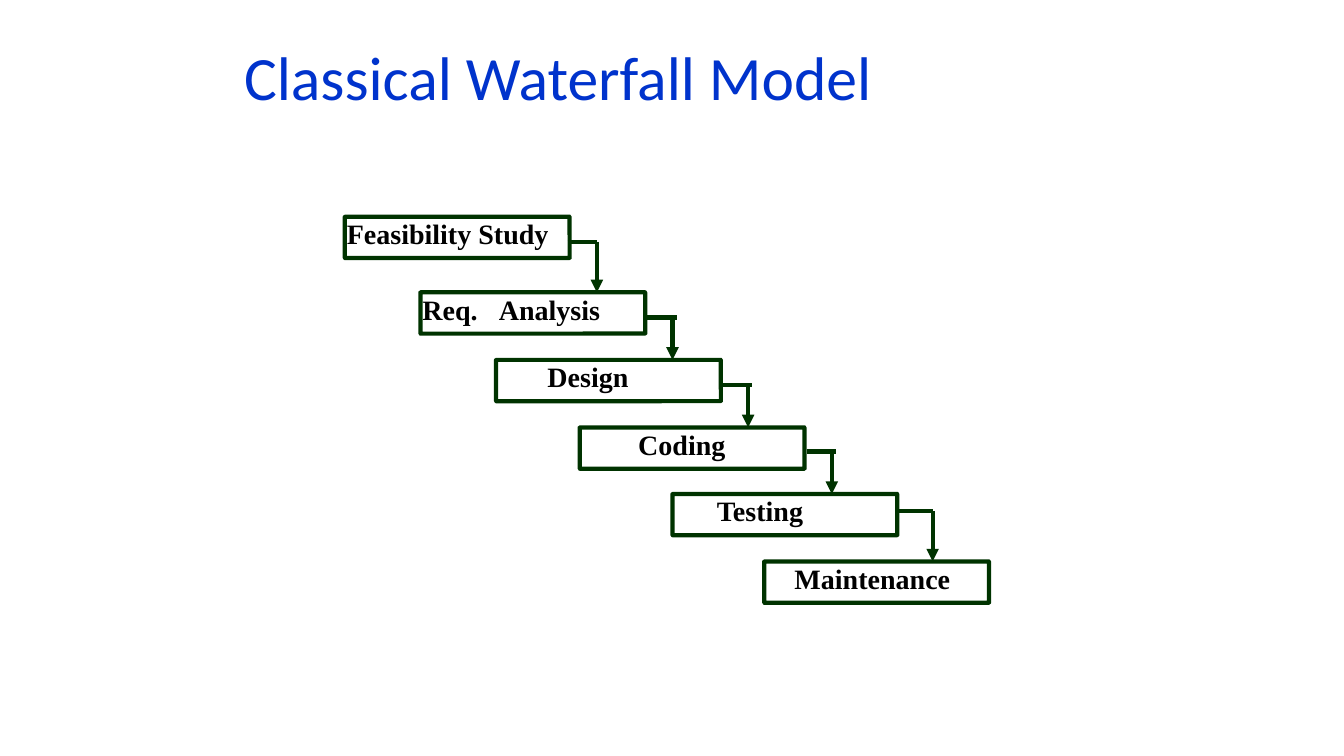
from pptx import Presentation
from pptx.dml.color import RGBColor
from pptx.enum.shapes import MSO_CONNECTOR, MSO_SHAPE
from pptx.enum.text import MSO_ANCHOR, MSO_AUTO_SIZE, PP_ALIGN
from pptx.oxml.ns import qn
from pptx.util import Inches, Pt
from lxml.etree import SubElement

COLORS = {"title": "0033CC", "text": "000000", "line": "003300"}

# Phase words, left, top, text indent
PHASES = [
    (("Feasibility Study",), 3.42, 2.15, 0),
    (("Req.", "Analysis"), 4.17, 2.9, 0),
    (("Design",), 4.92, 3.57, 0.49),
    (("Coding",), 5.75, 4.24, 0.56),
    (("Testing",), 6.67, 4.9, 0.42),
    (("Maintenance",), 7.58, 5.57, 0.28),
]
# Stub start, stub end, arrow x, stub y; each arrow ends at the next phase
STEPS = [
    (5.63, 5.92, 5.92, 2.4),
    (6.42, 6.71, 6.67, 3.15),
    (7.17, 7.46, 7.42, 3.82),
    (8, 8.29, 8.25, 4.48),
    (8.92, 9.25, 9.25, 5.07),
]


def add_text(para, text, font="Times New Roman", size=20, color="text",
             bold=False, tracking=0):
    span = para.add_run()
    span.text = text
    span.font.name = font
    span.font.size = Pt(size)
    span.font.bold = bold
    span.font.color.rgb = RGBColor.from_string(COLORS[color])
    if tracking:
        span.font._element.set("spc", str(tracking * 100))


class WaterfallSlide:
    line_width = Pt(3)
    box_width, box_height = 2.23, 0.41
    word_gap = 10  # extra points between separated words

    def __init__(self, deck):
        self.page = deck.slides.add_slide(deck.slide_layouts[5])

    def frame(self, box, anchor, line_spacing, space_before):
        frame = box.text_frame
        frame.word_wrap = True
        frame.auto_size = MSO_AUTO_SIZE.NONE
        frame.vertical_anchor = anchor
        frame.margin_left = frame.margin_right = Inches(0.02)
        frame.margin_top = frame.margin_bottom = Inches(0.05)
        para = frame.paragraphs[0]
        para.alignment = PP_ALIGN.LEFT
        para.line_spacing = line_spacing
        para.space_before = Pt(space_before)
        return para

    def stroke(self, line):
        line.color.rgb = RGBColor.from_string(COLORS["line"])
        line.width = self.line_width

    def title(self, text):
        box = self.page.shapes.title
        box.left, box.top = Inches(2.4), Inches(0.18)
        box.width, box.height = Inches(8.53), Inches(1.24)
        para = self.frame(box, MSO_ANCHOR.MIDDLE, 0.9, 9.1)
        add_text(para, text, font="Calibri", size=44, color="title")

    def phase(self, words, left, top, indent):
        # Label
        label = self.page.shapes.add_textbox(
            Inches(left), Inches(top), Inches(2.33), Inches(0.43))
        para = self.frame(label, MSO_ANCHOR.TOP, 0.85, 11.5)
        para._p.get_or_add_pPr().set("marL", str(Inches(indent)))
        for number, word in enumerate(words):
            if number:
                add_text(para, " ", bold=True, tracking=self.word_gap)
            add_text(para, word, bold=True)
        # Outline
        box = self.page.shapes.add_shape(
            MSO_SHAPE.ROUNDED_RECTANGLE, Inches(left), Inches(top),
            Inches(self.box_width), Inches(self.box_height))
        box.adjustments[0] = 0.004
        box.shadow.inherit = False
        box.fill.background()
        self.stroke(box.line)

    def connector(self, x1, y1, x2, y2, arrow=False):
        link = self.page.shapes.add_connector(
            MSO_CONNECTOR.STRAIGHT, Inches(x1), Inches(y1),
            Inches(x2), Inches(y2))
        self.stroke(link.line)
        if arrow:
            SubElement(link.line._get_or_add_ln(), qn("a:tailEnd"),
                       type="triangle")
        SubElement(link._element.spPr, qn("a:effectLst"))


def main():
    deck = Presentation()
    deck.slide_width, deck.slide_height = Inches(13.33), Inches(7.5)
    slide = WaterfallSlide(deck)
    slide.title("Classical Waterfall Model")

    # Phases
    for phase in PHASES:
        slide.phase(*phase)

    # Steps down to the following phase
    for (start, end, elbow, y), (_, _, next_top, _) in zip(STEPS, PHASES[1:]):
        slide.connector(start, y, end, y)
        slide.connector(elbow, y, elbow, next_top, arrow=True)

    deck.save("out.pptx")


if __name__ == "__main__":
    main()
